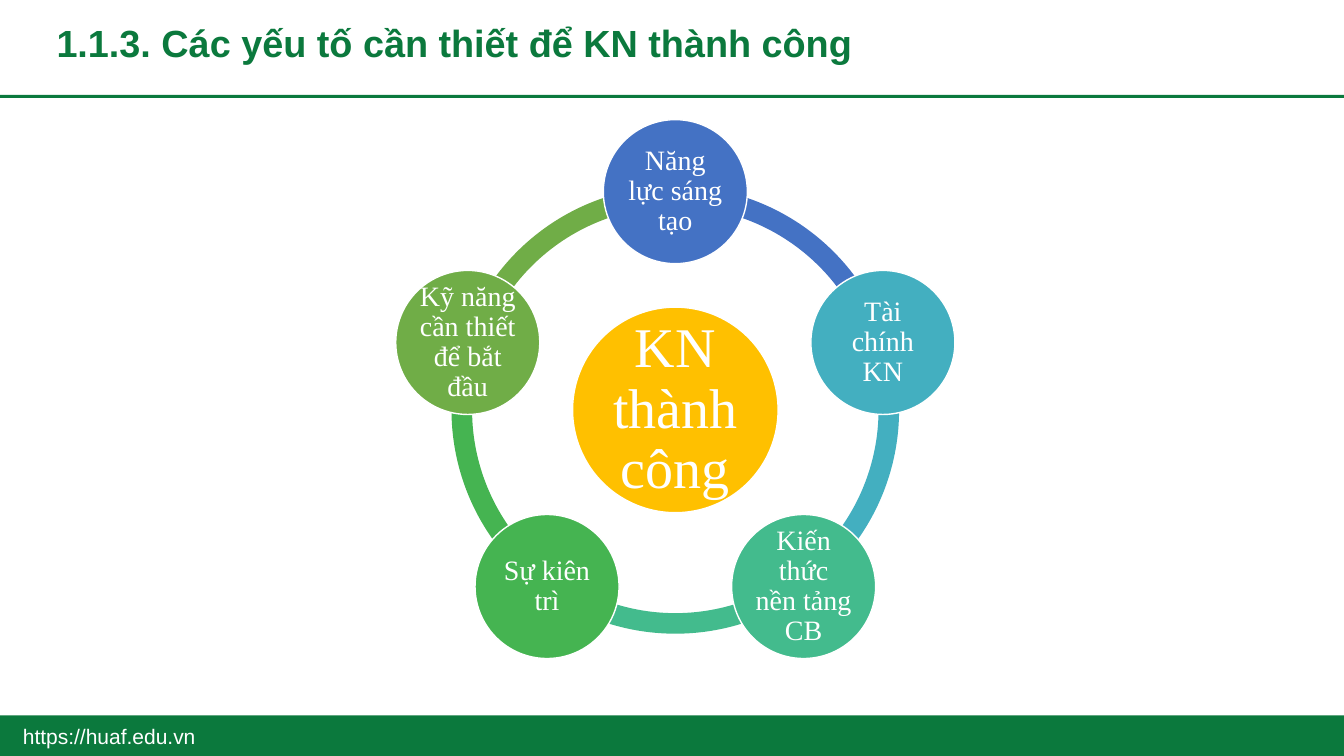
from dataclasses import dataclass
from math import cos, radians, sin

from pptx import Presentation
from pptx.dml.color import RGBColor
from pptx.enum.shapes import MSO_SHAPE as Shape
from pptx.enum.text import MSO_ANCHOR as Anchor, MSO_AUTO_SIZE as AutoSize, PP_ALIGN as Align
from pptx.util import Cm, Pt

TITLE = "1.1.3. Các yếu tố cần thiết để KN thành công"
FOOTER = "https://huaf.edu.vn"
GOAL = "KN thành công"
# Clockwise from the top; each colour also fills the arc that follows the circle
FACTORS = [
    ("Năng lực sáng tạo", "4472C4"),
    ("Tài chính KN", "43AFC0"),
    ("Kiến thức nền tảng CB", "43BB8D"),
    ("Sự kiên trì", "45B451"),
    ("Kỹ năng cần thiết để bắt đầu", "70AD47"),
]


@dataclass(frozen=True)
class Theme:
    green: str = "0B793D"
    gold: str = "FFC000"
    white: str = "FFFFFF"
    heading_font: str = "Arial"
    body_font: str = "Times New Roman"
    title_size: int = 27
    footer_size: int = 15
    goal_size: int = 40
    factor_size: int = 20


THEME = Theme()

# Lengths in centimetres
SLIDE_W, SLIDE_H = 33.87, 19.05
RULE_TOP, RULE_H = 2.39, 0.08
FOOTER_W, FOOTER_H = 5.51, 1.02
CENTER_X, CENTER_Y = 17.02, 10.33
RING_D, GOAL_D, FACTOR_D = 11.28, 5.18, 3.63
ORBIT_R = 5.5
ARC_THICKNESS = 0.046
ADJ_PER_DEGREE = 0.6


def add_filled(shapes, kind, x, y, w, h, color):
    sp = shapes.add_shape(kind, Cm(x), Cm(y), Cm(w), Cm(h))
    sp.shadow.inherit = False
    sp.fill.solid()
    sp.fill.fore_color.rgb = RGBColor.from_string(color)
    sp.line.fill.background()
    return sp


def write(tf, text, font, size, color, align, anchor=Anchor.MIDDLE, bold=False, spacing=0.9):
    tf.text = text
    tf.word_wrap = True
    tf.auto_size = AutoSize.NONE
    tf.vertical_anchor = anchor
    p = tf.paragraphs[0]
    p.alignment = align
    p.line_spacing = spacing
    r = p.runs[0]
    r.font.name = font
    r.font.size = Pt(size)
    r.font.bold = bold
    r.font.color.rgb = RGBColor.from_string(color)


def add_circle(shapes, text, cx, cy, d, color, size, inset):
    sp = add_filled(shapes, Shape.OVAL, cx - d / 2, cy - d / 2, d, d, color)
    sp.line.color.rgb = RGBColor.from_string(THEME.white)
    sp.line.width = Pt(1)
    tf = sp.text_frame
    tf.margin_left = tf.margin_right = tf.margin_top = tf.margin_bottom = Cm(inset)
    write(tf, text, THEME.body_font, size, THEME.white, Align.CENTER)


def add_frame(slide):
    """Add the title, the rule below it and the footer band."""
    footer_top = SLIDE_H - FOOTER_H
    add_filled(slide.shapes, Shape.RECTANGLE, 0, footer_top, SLIDE_W, FOOTER_H, THEME.green)
    add_filled(slide.shapes, Shape.RECTANGLE, 0, RULE_TOP, SLIDE_W, RULE_H, THEME.green)
    box = slide.shapes.add_textbox(Cm(0), Cm(footer_top), Cm(FOOTER_W), Cm(FOOTER_H))
    write(box.text_frame, FOOTER, THEME.heading_font, THEME.footer_size, THEME.white,
          Align.CENTER, spacing=1.0)

    title = slide.shapes.title
    title.left, title.top, title.width, title.height = Cm(1.17), Cm(0.46), Cm(31.42), Cm(1.32)
    write(title.text_frame, TITLE, THEME.heading_font, THEME.title_size, THEME.green,
          Align.LEFT, Anchor.BOTTOM, bold=True)


def add_cycle(slide):
    """Add the ring of arcs, the goal in its centre and the factors around it."""
    shapes = slide.shapes.add_group_shape().shapes
    step = 360 / len(FACTORS)
    angles = [(270 + i * step) % 360 for i in range(len(FACTORS))]

    for angle, (_, color) in zip(angles, FACTORS):
        arc = add_filled(shapes, Shape.BLOCK_ARC, CENTER_X - RING_D / 2,
                         CENTER_Y - RING_D / 2, RING_D, RING_D, color)
        arc.adjustments[0] = angle * ADJ_PER_DEGREE
        arc.adjustments[1] = (angle + step) % 360 * ADJ_PER_DEGREE
        arc.adjustments[2] = ARC_THICKNESS

    add_circle(shapes, GOAL, CENTER_X, CENTER_Y, GOAL_D, THEME.gold, THEME.goal_size, 0.14)
    for angle, (text, color) in zip(angles, FACTORS):
        cx = CENTER_X + ORBIT_R * cos(radians(angle))
        cy = CENTER_Y + ORBIT_R * sin(radians(angle))
        add_circle(shapes, text, cx, cy, FACTOR_D, color, THEME.factor_size, 0.07)


def main():
    prs = Presentation()
    prs.slide_width, prs.slide_height = Cm(SLIDE_W), Cm(SLIDE_H)
    slide = prs.slides.add_slide(prs.slide_layouts[5])
    add_frame(slide)
    add_cycle(slide)
    prs.save("out.pptx")


if __name__ == "__main__":
    main()
